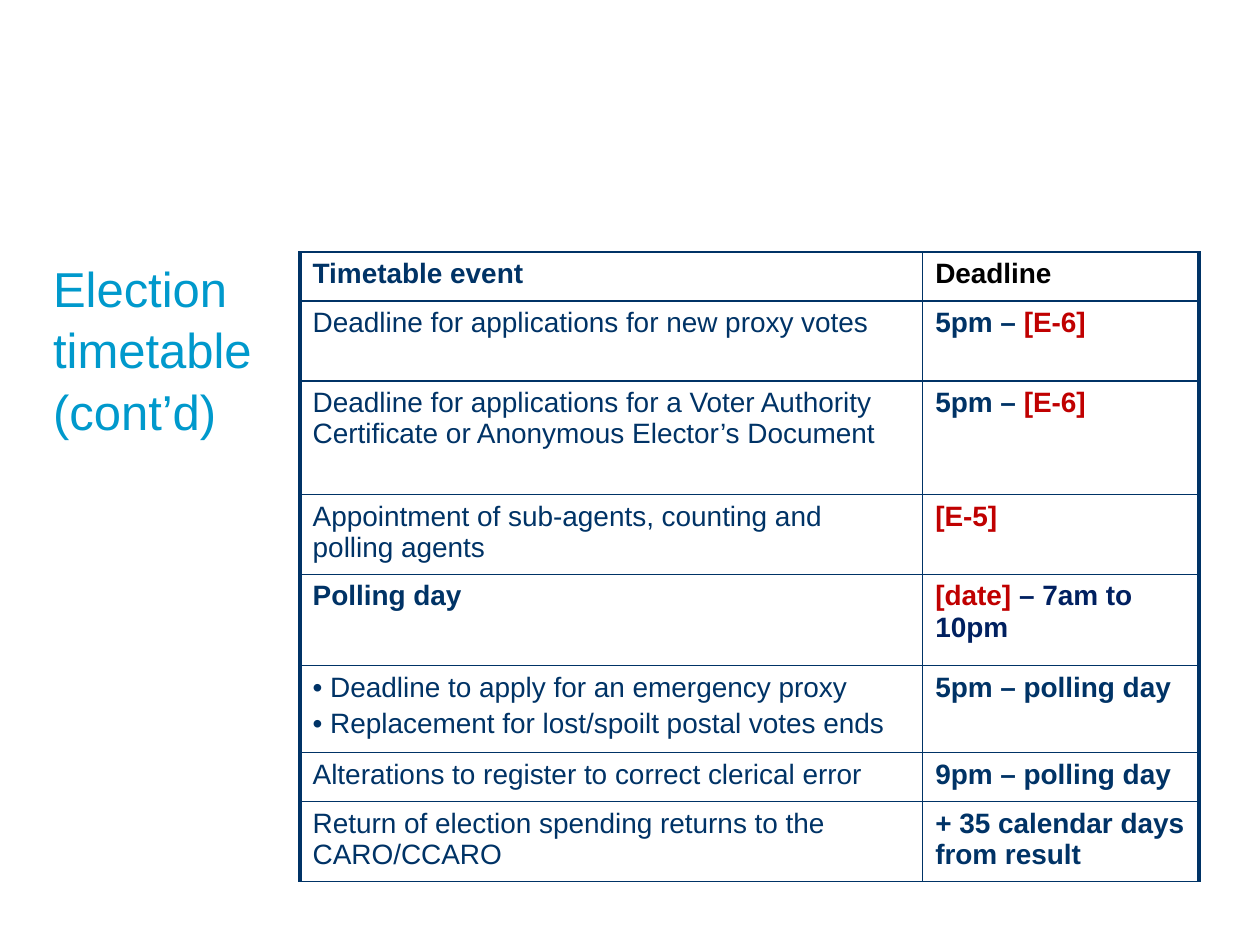
"""Build the election timetable slide."""
from dataclasses import dataclass
from lxml.etree import SubElement
from pptx import Presentation
from pptx.dml.color import RGBColor
from pptx.enum.text import MSO_ANCHOR, MSO_AUTO_SIZE, PP_ALIGN
from pptx.oxml.ns import qn
from pptx.slide import Slide
from pptx.util import Cm, Pt

NAVY, RED = "003366", "C00000"


def color(value):
    return RGBColor.from_string(value)


def add_text(paragraph, text, size=16, fill=NAVY, bold=False, font="Arial"):
    run = paragraph.add_run()
    run.text = text
    run.font.name = font
    run.font.size = Pt(size)
    run.font.bold = bold
    run.font.color.rgb = color(fill)


@dataclass
class TimetableSlide:
    slide: Slide
    border_color: str = NAVY
    title_color: str = "0099CC"
    outer_width: float = 2.25
    inner_width: float = 1
    bullet_gap: float = 3.2

    def add_title(self, text, left, top, width, height):
        title = self.slide.shapes.title
        title.left, title.top, title.width, title.height = map(Cm, (left, top, width, height))
        frame = title.text_frame
        frame.word_wrap = True
        frame.auto_size = MSO_AUTO_SIZE.NONE
        frame.vertical_anchor = MSO_ANCHOR.TOP
        frame.margin_left = frame.margin_right = frame.margin_bottom = 0
        frame.margin_top = Cm(0.09)
        paragraph = frame.paragraphs[0]
        paragraph.alignment = PP_ALIGN.LEFT
        paragraph.line_spacing = 1.04
        add_text(paragraph, text, size=28, fill=self.title_color)

    def add_borders(self, cell, widths):
        properties = cell._tc.get_or_add_tcPr()
        for side, width in widths.items():
            line = SubElement(properties, qn(f"a:ln{side}"), w=str(Pt(width)))
            SubElement(SubElement(line, qn("a:solidFill")), qn("a:srgbClr"), val=self.border_color)

    def fill_cell(self, cell, paragraphs):
        frame = cell.text_frame
        for index, runs in enumerate(paragraphs):
            paragraph = frame.add_paragraph() if index else frame.paragraphs[0]
            if index:
                paragraph.space_before = Pt(self.bullet_gap)
            for text, style in runs:
                add_text(paragraph, text, **style)

    def add_table(self, rows, left, top, column_widths, row_heights):
        shape = self.slide.shapes.add_table(
            len(rows), len(column_widths), Cm(left), Cm(top),
            Cm(sum(column_widths)), Cm(sum(row_heights)))
        table = shape.table
        table.first_row = table.horz_banding = False
        for column, width in zip(table.columns, column_widths):
            column.width = Cm(width)
        last = len(column_widths) - 1
        for row, height, contents in zip(table.rows, row_heights, rows):
            row.height = Cm(height)
            for index, (cell, paragraphs) in enumerate(zip(row.cells, contents)):
                self.add_borders(cell, {
                    "L": self.inner_width if index else self.outer_width,
                    "R": self.outer_width if index == last else self.inner_width,
                    "T": self.inner_width,
                    "B": self.inner_width})
                cell.fill.solid()
                cell.fill.fore_color.rgb = color("FFFFFF")
                self.fill_cell(cell, paragraphs)


def plain(*lines):
    return [[(line, {})] for line in lines]


def strong(*parts):
    return [[(text, {"bold": True, "fill": fill}) for text, fill in parts]]


def main():
    presentation = Presentation()
    presentation.slide_width, presentation.slide_height = Cm(25.4), Cm(19.05)
    slide = presentation.slides.add_slide(presentation.slide_layouts[5])
    timetable = TimetableSlide(slide)
    timetable.add_title("Election timetable (cont’d)", 1.07, 5.08, 6.99, 11.86)

    proxy_deadline = strong(("5pm – ", NAVY), ("[E-6]", RED))
    rows = [
        (strong(("Timetable event", NAVY)), strong(("Deadline", "000000"))),
        (plain("Deadline for applications for new proxy votes"), proxy_deadline),
        (plain("Deadline for applications for a Voter Authority Certificate "
               "or Anonymous Elector’s Document"), proxy_deadline),
        (plain("Appointment of sub-agents, counting and polling agents"),
         strong(("[E-5]", RED))),
        (strong(("Polling day", NAVY)),
         strong(("[date] ", RED), ("– 7am to 10pm", "002060"))),
        (plain("• Deadline to apply for an emergency proxy",
               "• Replacement for lost/spoilt postal votes ends"),
         strong(("5pm – polling day", NAVY))),
        (plain("Alterations to register to correct clerical error"),
         strong(("9pm – polling day", NAVY))),
        (plain("Return of election spending returns to the CARO/CCARO"),
         strong(("+ 35 calendar days from result", NAVY))),
    ]
    timetable.add_table(rows, 6.05, 5.08, (12.55, 5.57),
                        (0.99, 1.61, 2.29, 1.61, 1.84, 1.75, 0.99, 1.61))
    presentation.save("out.pptx")


if __name__ == "__main__":
    main()
